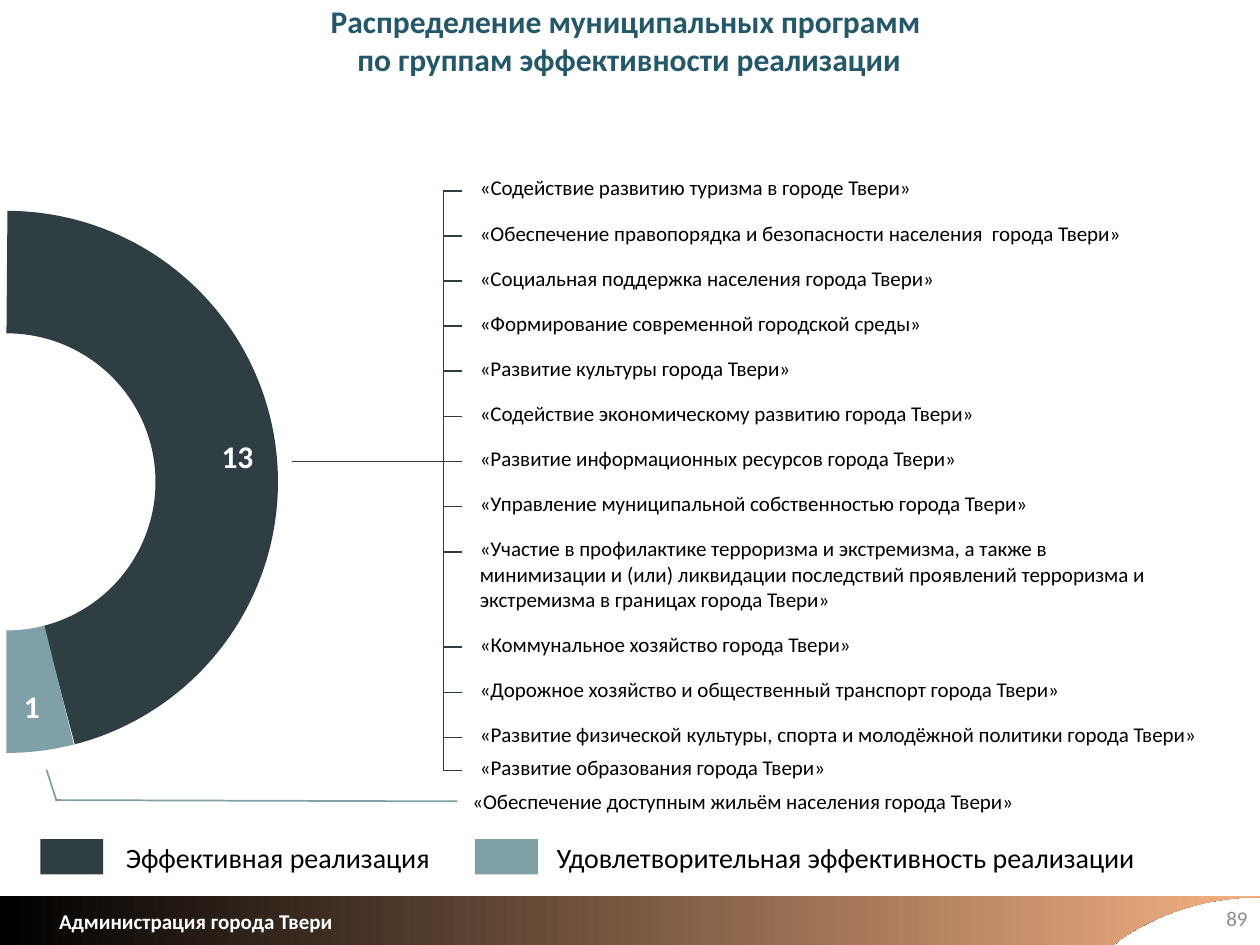
from collections import namedtuple

from lxml.etree import SubElement
from pptx import Presentation
from pptx.dml.color import RGBColor
from pptx.enum.shapes import MSO_CONNECTOR, MSO_SHAPE
from pptx.enum.text import MSO_ANCHOR, MSO_AUTO_SIZE, PP_ALIGN
from pptx.oxml.ns import qn
from pptx.util import Inches, Pt

COLUMNS, ROWS = 100, 75
CELL = Inches(0.1)

DARK = RGBColor(0x2E, 0x3E, 0x42)
LIGHT = RGBColor(0x80, 0xA0, 0xA8)
TITLE = RGBColor(0x23, 0x58, 0x6A)
BLACK = RGBColor(0, 0, 0)
WHITE = RGBColor(0xFF, 0xFF, 0xFF)
GREY = RGBColor(0x8C, 0x8C, 0x8C)
PEACH = RGBColor(0xF4, 0xB1, 0x83)

BODY = {"size": Pt(12), "color": BLACK, "bold": False}
LEGEND = BODY | {"size": Pt(16)}
HEADING = {"size": Pt(18), "color": TITLE, "bold": True}
COUNT = HEADING | {"color": WHITE}
OWNER = BODY | {"color": WHITE, "bold": True}
PAGE = BODY | {"color": GREY}

Box = namedtuple("Box", "left top width height")

PITCH = 3.58
PROGRAMS = [
    (0, 37.9, "«Содействие развитию туризма в городе Твери»"),
    (1, 53.3, "«Обеспечение правопорядка и безопасности населения  города Твери»"),
    (2, 38.4, "«Социальная поддержка населения города Твери»"),
    (3, 37.7, "«Формирование современной городской среды»"),
    (4, 28.7, "«Развитие культуры города Твери»"),
    (5, 43.6, "«Содействие экономическому развитию города Твери»"),
    (6, 44, "«Развитие информационных ресурсов города Твери»"),
    (7, 50, "«Управление муниципальной собственностью города Твери»"),
    (8, 57.3, "«Участие в профилактике терроризма и экстремизма, а также в минимизации "
              "и (или) ликвидации последствий проявлений терроризма и экстремизма "
              "в границах города Твери»"),
    (10.12, 31.9, "«Коммунальное хозяйство города Твери»"),
    (11.12, 48.6, "«Дорожное хозяйство и общественный транспорт города Твери»"),
    (12.12, 61.5, "«Развитие физической культуры, спорта и молодёжной политики города Твери»"),
    (12.85, 30.8, "«Развитие образования города Твери»"),
]


def cells(*lengths):
    """Convert grid lengths to EMU."""
    return [round(length * CELL) for length in lengths]


def add_text(slide, box, lines, style, align=PP_ALIGN.LEFT, **frame_format):
    """Place lines of text in a box of the grid."""
    frame = slide.shapes.add_textbox(*cells(*box)).text_frame
    frame_values = {"word_wrap": True, "auto_size": MSO_AUTO_SIZE.SHAPE_TO_FIT_TEXT}
    for name, value in (frame_values | frame_format).items():
        setattr(frame, name, value)
    for index, line in enumerate(lines):
        paragraph = frame.add_paragraph() if index else frame.paragraphs[0]
        paragraph.alignment = align
        font = paragraph.add_run().font
        paragraph.runs[0].text = line
        font.color.rgb = style["color"]
        for name, value in {"name": "Calibri", "size": style["size"], "bold": style["bold"]}.items():
            setattr(font, name, value)


def add_rule(slide, start, end, color):
    """Draw a thin straight connector between two grid points."""
    rule = slide.shapes.add_connector(MSO_CONNECTOR.STRAIGHT, *cells(*start, *end))
    rule.line.color.rgb = color
    rule.line.width = Pt(1)
    SubElement(rule._element.spPr, qn("a:effectLst"))


def add_ring(slide, box):
    """Draw the half ring with the number of programs in each group."""
    for color, start, end in ((DARK, 180, 345.6), (LIGHT, 345.6, 0.17)):
        arc = slide.shapes.add_shape(MSO_SHAPE.ARC, *cells(*box))
        arc.shadow.inherit = False
        arc.rotation = 90
        arc.fill.background()
        arc.line.color.rgb = color
        arc.line.width = Pt(70)
        for index, angle in enumerate((start, end)):
            arc.adjustments[index] = angle * 0.6
    for count, left, top, width in (("13", 32.7, 12.6, 5.2), ("1", 17, 32.4, 4.1)):
        add_text(slide, Box(box.left + left, box.top + top, width, 4), [count], COUNT)


def add_programs(slide, box):
    """List the effective programs along a bracket joined to the ring."""
    spine, tick_end, text_left = box.left + 12, box.left + 13.5, box.left + 13.9
    tick_rows = []
    for slot, width, program in PROGRAMS:
        top = box.top + slot * PITCH
        height = 7.1 if slot == 8 else 3
        add_text(slide, Box(text_left, top, width, height), [program], BODY)
        tick_rows.append(top + 1.75)
        tick_start = box.left if slot == 6 else spine
        add_rule(slide, (tick_end, tick_rows[-1]), (tick_start, tick_rows[-1]), DARK)
    add_rule(slide, (spine, tick_rows[0]), (spine, tick_rows[-1]), DARK)


def add_satisfactory_program(slide, box):
    """Name the satisfactory program at the end of its leader line."""
    level = box.top + 2.5
    add_rule(slide, (box.left + 32.6, level), (box.left + 0.7, level - 0.1), LIGHT)
    add_rule(slide, (box.left + 0.8, level), (box.left, box.top), LIGHT)
    add_text(slide, Box(box.left + 32.8, box.top + 1, 45.5, 3),
             ["«Обеспечение доступным жильём населения города Твери»"], BODY)


def add_legend(slide, box):
    """Show the colour of each effectiveness group."""
    entries = ((DARK, 0, 5.8, 28.6, "Эффективная реализация"),
               (LIGHT, 34.5, 40, 50.3, "Удовлетворительная эффективность реализации"))
    for color, key_left, text_left, width, group in entries:
        key = slide.shapes.add_shape(
            MSO_SHAPE.RECTANGLE, *cells(box.left + key_left, box.top + 0.4, 5, 2.8))
        key.shadow.inherit = False
        key.fill.solid()
        key.fill.fore_color.rgb = color
        key.line.fill.background()
        add_text(slide, Box(box.left + text_left, box.top, width, box.height), [group], LEGEND)


def add_footer(slide, box):
    """Draw the gradient band with its curved end, the owner and the page number."""
    right, bottom = box.left + box.width, box.top + box.height
    curve = ((right, box.top + 0.1), (right - 4.1, box.top + 0.1),
             (right - 7.9, box.top + 1.3), (right - 11, bottom - 0.5))
    outline = [(right, box.top)]
    for step in range(25):
        t = step / 24
        weights = ((1 - t) ** 3, 3 * t * (1 - t) ** 2, 3 * t ** 2 * (1 - t), t ** 3)
        outline.append(tuple(sum(weight * point[axis] for weight, point in zip(weights, curve))
                             for axis in (0, 1)))
    outline += [(right - 11.6, bottom), (box.left, bottom)]
    builder = slide.shapes.build_freeform(*cells(box.left, box.top))
    builder.add_line_segments([cells(*point) for point in outline], close=True)
    band = builder.convert_to_shape()
    band.shadow.inherit = False
    band.line.fill.background()
    band.fill.gradient()
    band.fill.gradient_angle = 0
    for stop, color, position in zip(band.fill.gradient_stops, (BLACK, PEACH), (0, 1)):
        stop.color.rgb = color
        stop.position = position
    add_text(slide, Box(box.left + 3.7, box.top + 0.5, 23.9, 3),
             ["Администрация города Твери"], OWNER, word_wrap=False)
    add_text(slide, Box(right - 22.5, box.top - 0.2, 22.5, 4), ["89"], PAGE, PP_ALIGN.RIGHT,
             vertical_anchor=MSO_ANCHOR.MIDDLE, auto_size=MSO_AUTO_SIZE.NONE)


def add_title(slide, box):
    """Write the two centred lines of the heading."""
    add_text(slide, box, ["Распределение муниципальных программ ",
                          "по группам эффективности реализации"], HEADING, PP_ALIGN.CENTER,
             vertical_anchor=MSO_ANCHOR.MIDDLE, auto_size=MSO_AUTO_SIZE.NONE)


def main():
    """Build the slide and save it."""
    presentation = Presentation()
    presentation.slide_width, presentation.slide_height = cells(COLUMNS, ROWS)
    slide = presentation.slides.add_slide(presentation.slide_layouts[6])
    add_ring(slide, Box(-16.1, 21.6, 33.3, 33.3))
    add_programs(slide, Box(23.2, 13.4, 75.4, 49))
    add_satisfactory_program(slide, Box(3.7, 61.1, 78.3, 4))
    add_title(slide, Box(4.8, 0, 90.3, 6.3))
    add_legend(slide, Box(3.2, 66.2, 90.3, 3.7))
    add_footer(slide, Box(0, 71.1, COLUMNS, 3.9))
    presentation.save("out.pptx")


if __name__ == "__main__":
    main()
